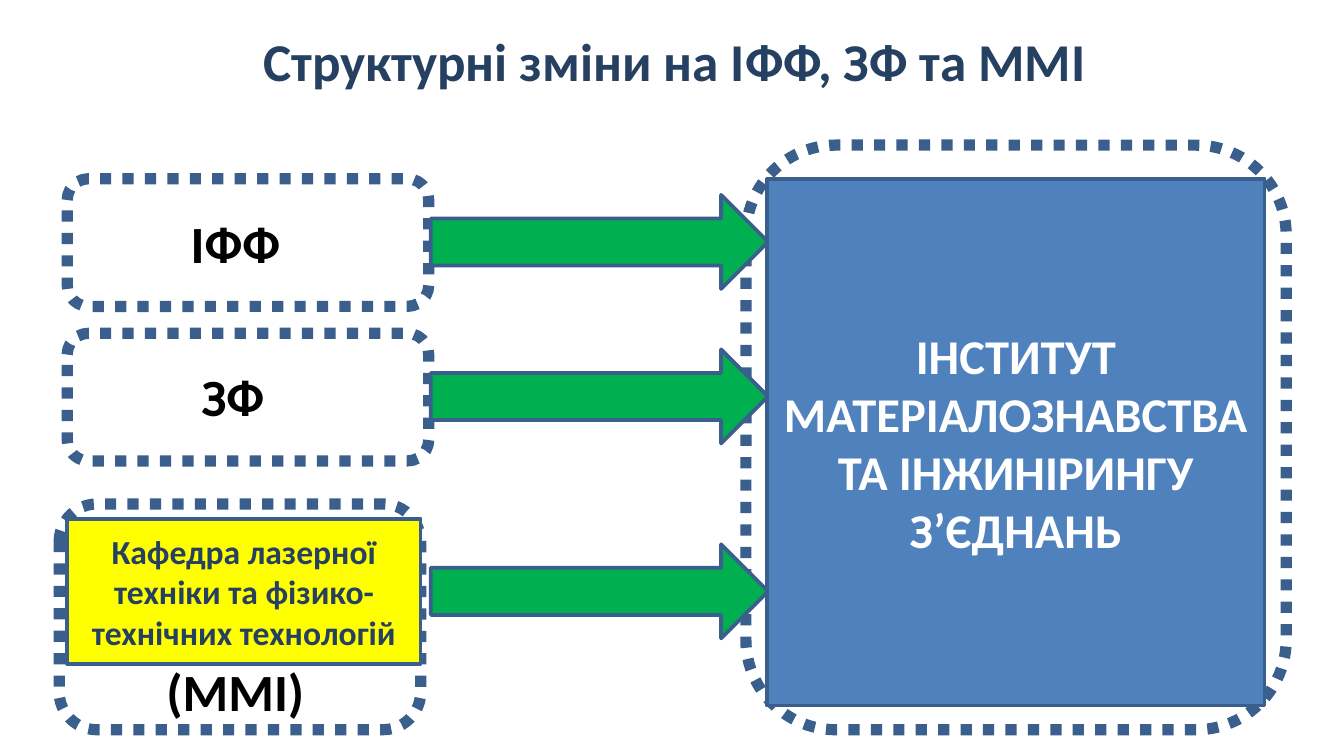
from pptx import Presentation
from pptx.dml.color import RGBColor
from pptx.enum.dml import MSO_LINE
from pptx.enum.shapes import MSO_SHAPE
from pptx.enum.text import MSO_ANCHOR, PP_ALIGN
from pptx.util import Inches, Pt

RECT = MSO_SHAPE.RECTANGLE
ROUND = MSO_SHAPE.ROUNDED_RECTANGLE
ARROW = MSO_SHAPE.DOWN_ARROW
DOTS = MSO_LINE.ROUND_DOT
MIDDLE = MSO_ANCHOR.MIDDLE
LEFT, CENTER = PP_ALIGN.LEFT, PP_ALIGN.CENTER

FONT = "Calibri"
NAVY, EDGE, BLACK, WHITE = "254061", "3A5F8C", "000000", "FFFFFF"
GREEN, YELLOW, BLUE = "00B050", "FFFF00", "4F81BD"

TITLE = ("Структурні зміни на ІФФ, ЗФ та ММІ", (0.04, 0.16, 9.96, 0.58))
FRAMES = [
    (0.5, 1.33, 2.69, 0.95),
    (0.5, 2.48, 2.69, 0.95),
    (0.44, 3.75, 2.69, 1.68),
    (5.55, 1.08, 4.02, 4.35),
]
LABELS = [
    ("ІФФ", (1.32, 1.52, 1.02, 0.57)),
    ("ЗФ", (1.4, 2.66, 0.77, 0.57)),
    ("(ММІ)", (1.14, 4.86, 1.29, 0.57)),
]
BOXES = [
    ("Кафедра лазерної техніки та фізико-технічних технологій",
     (0.5, 3.86, 2.63, 1.08), YELLOW, 18, NAVY),
    ("ІНСТИТУТ МАТЕРІАЛОЗНАВСТВА ТА ІНЖИНІРИНГУ З’ЄДНАНЬ",
     (5.71, 1.33, 3.7, 3.92), BLUE, 26, WHITE),
]
ARROW_MID = 4.46
ARROW_ROWS = [1.8, 2.95, 4.4]
ARROW_W, ARROW_H = 0.7, 2.51


def color(code):
    return RGBColor.from_string(code)


def write(shape, text, size, ink, align):
    frame = shape.text_frame
    frame.word_wrap = True
    para = frame.paragraphs[0]
    para.alignment = align
    run = para.add_run()
    run.text = text
    font = run.font
    font.name, font.size, font.bold = FONT, Pt(size), True
    font.color.rgb = color(ink)


def draw(slide, kind, place, fill=None, width=2):
    shape = slide.shapes.add_shape(kind, *map(Inches, place))
    shape.shadow.inherit = False
    if fill:
        shape.fill.solid()
        shape.fill.fore_color.rgb = color(fill)
    else:
        shape.fill.background()
    shape.line.color.rgb = color(EDGE)
    shape.line.width = Pt(width)
    return shape


def label(slide, text, place, size, ink, align):
    box = slide.shapes.add_textbox(*map(Inches, place))
    write(box, text, size, ink, align)


def main():
    deck = Presentation()
    deck.slide_width = Inches(10)
    deck.slide_height = deck.slide_width * 9 // 16
    slide = deck.slides.add_slide(deck.slide_layouts[6])

    label(slide, *TITLE, 28.5, NAVY, CENTER)
    for place in FRAMES:
        draw(slide, ROUND, place, width=6).line.dash_style = DOTS
    for text, place in LABELS:
        label(slide, text, place, 28, BLACK, LEFT)
    for row in ARROW_ROWS:
        place = (ARROW_MID - ARROW_W / 2, row - ARROW_H / 2, ARROW_W, ARROW_H)
        draw(slide, ARROW, place, GREEN).rotation = 270
    for text, place, fill, size, ink in BOXES:
        box = draw(slide, RECT, place, fill)
        box.text_frame.vertical_anchor = MIDDLE
        write(box, text, size, ink, CENTER)

    deck.save("out.pptx")


if __name__ == "__main__":
    main()
